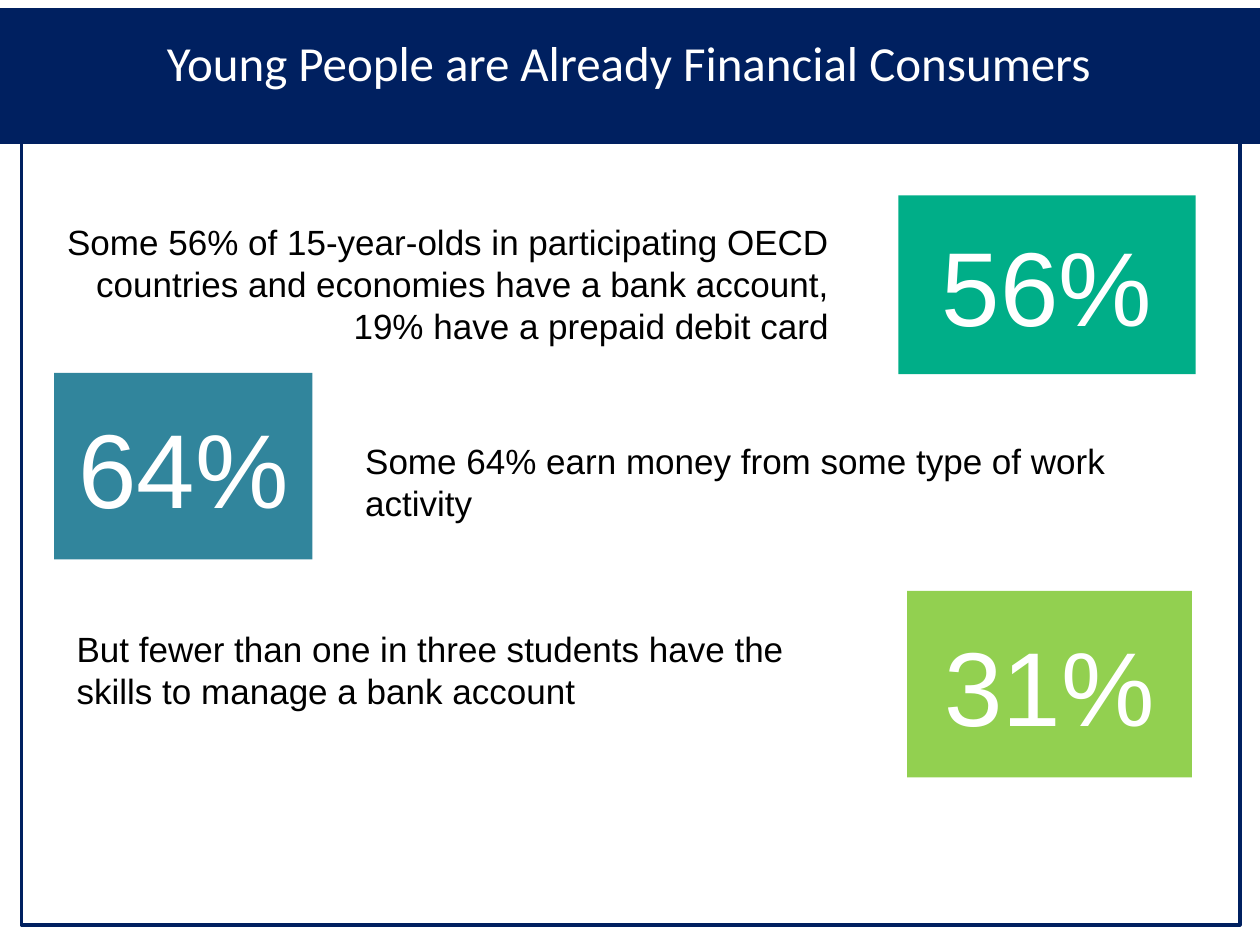
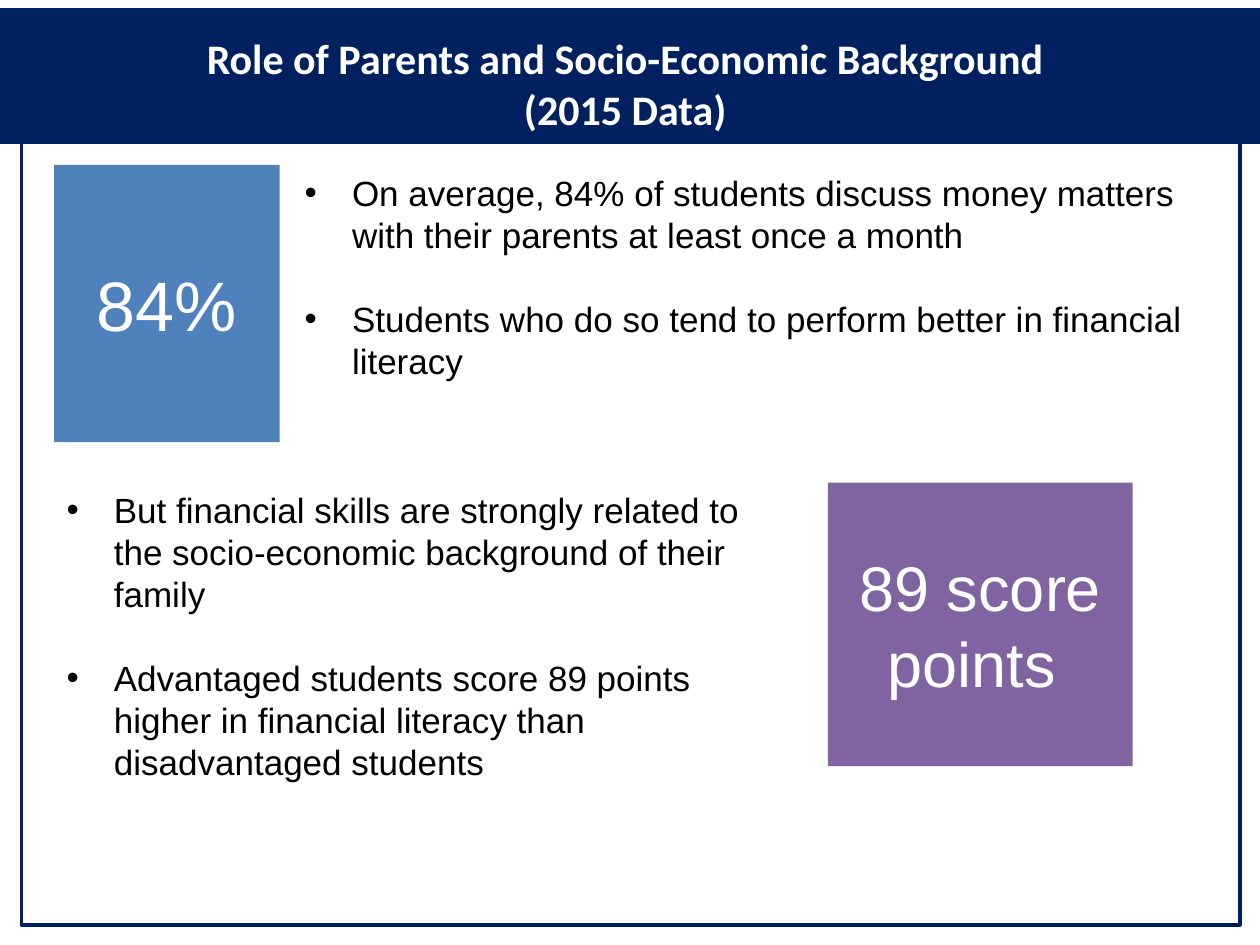
from lxml import etree
from pptx import Presentation
from pptx.dml.color import RGBColor
from pptx.enum.shapes import MSO_SHAPE
from pptx.enum.text import MSO_ANCHOR, PP_ALIGN
from pptx.oxml.ns import qn
from pptx.util import Inches, Pt

RECTANGLE = MSO_SHAPE.RECTANGLE
TOP, MIDDLE = MSO_ANCHOR.TOP, MSO_ANCHOR.MIDDLE
LEFT, CENTER, RIGHT = PP_ALIGN.LEFT, PP_ALIGN.CENTER, PP_ALIGN.RIGHT

NAVY = RGBColor(0x00, 0x20, 0x60)
WHITE = RGBColor(0xFF, 0xFF, 0xFF)
BLACK = RGBColor(0x00, 0x00, 0x00)
GREEN = RGBColor(0x00, 0xAE, 0x88)
TEAL = RGBColor(0x31, 0x85, 0x9C)
LIME = RGBColor(0x92, 0xD0, 0x50)
BLUE = RGBColor(0x4F, 0x81, 0xBD)
PURPLE = RGBColor(0x80, 0x64, 0xA2)

TITLE_FONT, BODY_FONT = "Calibri", "Arial"
BODY_SIZE = 20
BULLET_INDENT = 0.375
BULLET_GAP = 24

BAND = (0, 0.08, 10, 1.05)
FRAME = (0.17, 0.16, 9.67, 7.18)

SLIDES = [
    {
        "title": {"text": "Young People are Already Financial Consumers",
                  "at": (0.35, 0.21, 9.28, 0.94), "size": 28, "bold": False},
        "figures": [
            ("56%", (7.13, 1.55, 2.36, 1.42), GREEN, 60),
            ("64%", (0.43, 2.96, 2.05, 1.48), TEAL, 60),
            ("31%", (7.2, 4.69, 2.26, 1.48), LIME, 60),
        ],
        "statements": [
            (["Some 56% of 15-year-olds in participating OECD countries and "
              "economies have a bank account, 19% have a prepaid debit card"],
             (0.28, 1.55, 6.4, 1.4), MIDDLE, RIGHT),
            (["Some 64% earn money from some type of work activity"],
             (2.8, 3.44, 6.73, 0.77), MIDDLE, LEFT),
            (["But fewer than one in three students have the skills to manage "
              "a bank account"],
             (0.51, 4.93, 6.46, 0.77), TOP, LEFT),
        ],
        "bulleted": False,
    },
    {
        "title": {"text": "Role of Parents and Socio-Economic Background \v(2015 Data) ",
                  "at": (0.5, 0.21, 9, 1.34), "size": 24, "bold": True},
        "figures": [
            ("84%", (0.43, 1.31, 1.79, 2.2), BLUE, 40),
            ("89 score points ", (6.57, 3.83, 2.42, 2.25), PURPLE, 36),
        ],
        "statements": [
            (["On average, 84% of students discuss money matters with their "
              "parents at least once a month",
              "Students who do so tend to perform better in financial literacy"],
             (2.32, 1.31, 7.21, 2.2), TOP, LEFT),
            (["But financial skills are strongly related to the socio-economic "
              "background of their family",
              "Advantaged students score 89 points higher in financial literacy "
              "than disadvantaged students"],
             (0.43, 3.83, 5.98, 2.46), TOP, LEFT),
        ],
        "bulleted": True,
    },
]


def inches(place):
    return [Inches(length) for length in place]


def add_rectangle(page, place, fill=None, line=None):
    shape = page.shapes.add_shape(RECTANGLE, *inches(place))
    shape.shadow.inherit = False
    if fill is None:
        shape.fill.background()
    else:
        shape.fill.solid()
        shape.fill.fore_color.rgb = fill
    if line is None:
        shape.line.fill.background()
    else:
        shape.line.color.rgb = line
        shape.line.width = Pt(2)
    return shape


def add_bullet(para):
    properties = para._p.get_or_add_pPr()
    properties.set("marL", str(Inches(BULLET_INDENT)))
    properties.set("indent", str(-Inches(BULLET_INDENT)))
    etree.SubElement(properties, qn("a:buFont")).set("typeface", BODY_FONT)
    etree.SubElement(properties, qn("a:buChar")).set("char", "•")


def write(shape, texts, size, color, align, anchor, font=BODY_FONT,
          bold=False, bulleted=False):
    frame = shape.text_frame
    frame.word_wrap = True
    frame.vertical_anchor = anchor
    for index, text in enumerate(texts):
        para = frame.add_paragraph() if index else frame.paragraphs[0]
        para.text = text
        para.alignment = align
        if index:
            para.space_before = Pt(BULLET_GAP)
        if bulleted:
            add_bullet(para)
        para.font.name = font
        para.font.size = Pt(size)
        para.font.bold = bold
        para.font.color.rgb = color


def build_page(deck, content):
    page = deck.slides.add_slide(deck.slide_layouts[6])
    add_rectangle(page, BAND, fill=NAVY, line=NAVY)
    add_rectangle(page, FRAME, line=NAVY)
    for text, place, fill, size in content["figures"]:
        write(add_rectangle(page, place, fill), [text], size, WHITE, CENTER, MIDDLE)
    for texts, place, anchor, align in content["statements"]:
        box = page.shapes.add_textbox(*inches(place))
        write(box, texts, BODY_SIZE, BLACK, align, anchor,
              bulleted=content["bulleted"])
    title = content["title"]
    box = page.shapes.add_textbox(*inches(title["at"]))
    write(box, [title["text"]], title["size"], WHITE, CENTER, TOP,
          font=TITLE_FONT, bold=title["bold"])


def main():
    deck = Presentation()
    deck.slide_width, deck.slide_height = Inches(10), Inches(7.5)
    for content in SLIDES:
        build_page(deck, content)
    deck.save("out.pptx")


if __name__ == "__main__":
    main()
